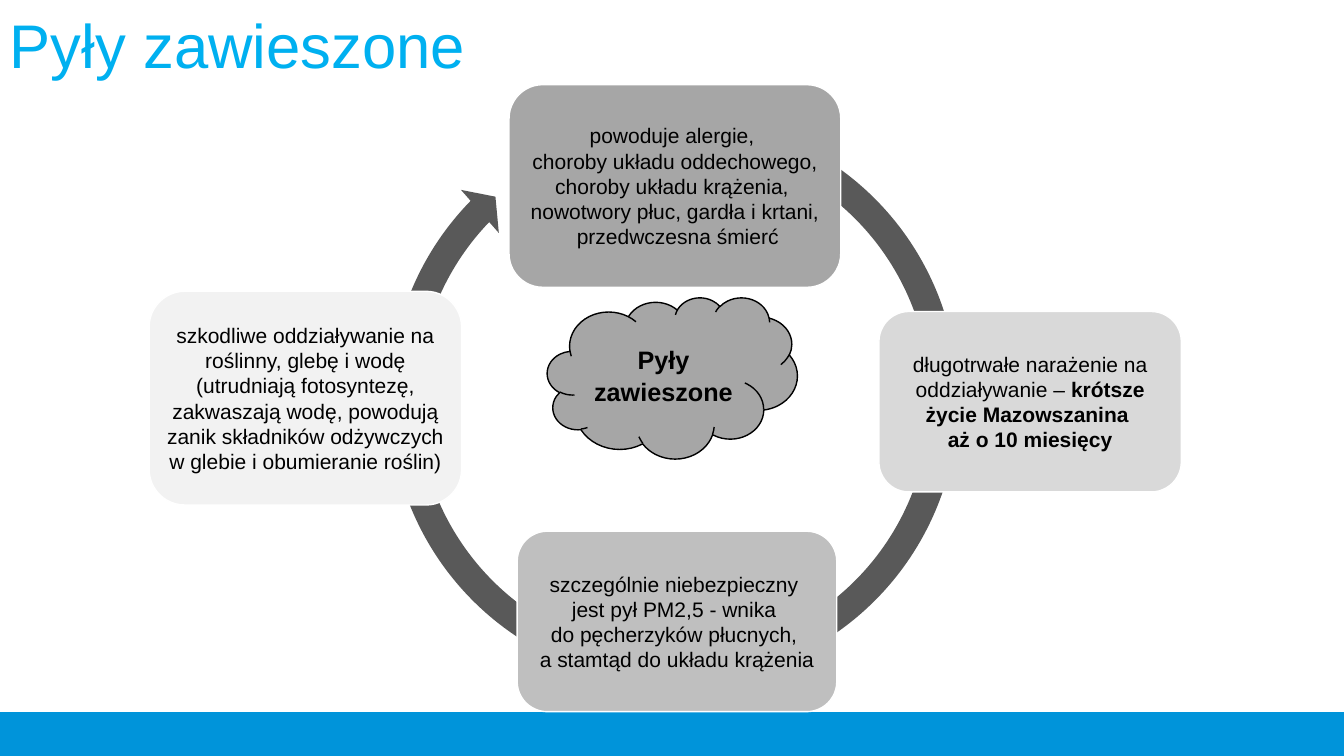
"""Build the slide on the effects of suspended dust as a cycle of four boxes."""
import pptx
import pptx.util
import pptx.dml.color
import pptx.enum.shapes
import pptx.enum.text

COLORS = {"bar": "0094DA", "ring": "595959", "title": "00B0F0", "text": "000000",
          "edge": "FFFFFF", "top": "A6A6A6", "right": "D9D9D9", "bottom": "BFBFBF",
          "left": "F2F2F2", "cloud": "A6A6A6"}
SHAPE = pptx.enum.shapes.MSO_SHAPE
CENTER = pptx.enum.text.PP_ALIGN.CENTER
MIDDLE = pptx.enum.text.MSO_ANCHOR.MIDDLE

prs = pptx.Presentation()
prs.slide_width = pptx.util.Inches(13.33)
prs.slide_height = pptx.util.Inches(7.5)
s = prs.slides.add_slide(prs.slide_layouts[6])
col = prs.slide_width / 100
row = prs.slide_height / 100


def add_block(kind, place, fill, line=None):
    x, y, w, h = place
    sp = s.shapes.add_shape(kind, round(x * col), round(y * row), round(w * col), round(h * row))
    sp.shadow.inherit = False
    sp.fill.solid()
    sp.fill.fore_color.rgb = pptx.dml.color.RGBColor.from_string(COLORS[fill])
    if line:
        sp.line.color.rgb = pptx.dml.color.RGBColor.from_string(COLORS[line])
        sp.line.width = pptx.util.Pt(1)
    else:
        sp.line.fill.background()
    return sp


def format_run(r, size, color="text", bold=False):
    r.font.name = "Arial"
    r.font.size = pptx.util.Pt(size)
    r.font.bold = bold
    r.font.color.rgb = pptx.dml.color.RGBColor.from_string(COLORS[color])


add_block(SHAPE.RECTANGLE, (0, 94.27, 100, 5.73), "bar", "bar")

ring = add_block(SHAPE.CIRCULAR_ARROW, (27.9, 13.33, 44.48, 79.07), "ring")
for i, value in enumerate((0.047, 2.729, 134.49, 176.248, 0.048)):
    ring.adjustments[i] = value

effects = [
    ("top", (37.88, 11.2, 24.68, 26.8),
     ["powoduje alergie, ", "choroby układu oddechowego,", "choroby układu krążenia, ",
      "nowotwory płuc, gardła i krtani,", " przedwczesna śmierć"]),
    ("right", (65.4, 41.2, 22.5, 23.87),
     ["długotrwałe narażenie na oddziaływanie – *krótsze życie Mazowszanina ",
      "*aż o 10 miesięcy"]),
    ("bottom", (38.48, 70.27, 23.78, 23.87),
     ["szczególnie niebezpieczny ", "jest pył PM2,5 - wnika ",
      "do pęcherzyków płucnych, ", "a stamtąd do układu krążenia"]),
    ("left", (11.1, 38.53, 23.25, 28.27),
     ["szkodliwe oddziaływanie na roślinny, glebę i wodę (utrudniają fotosyntezę, "
      "zakwaszają wodę, powodują zanik składników odżywczych w glebie i obumieranie roślin)"]),
]
for side, place, lines in effects:
    tf = add_block(SHAPE.ROUNDED_RECTANGLE, place, side, "edge").text_frame
    tf.word_wrap = True
    tf.vertical_anchor = MIDDLE
    tf.margin_left = tf.margin_right = tf.margin_top = tf.margin_bottom = pptx.util.Inches(0.06)
    for i, text in enumerate(lines):
        p = tf.add_paragraph() if i else tf.paragraphs[0]
        p.alignment = CENTER
        for part, words in enumerate(text.split("*")):
            if words:
                r = p.add_run()
                r.text = words
                format_run(r, 15, bold=part == 1)

tf = add_block(SHAPE.CLOUD, (40.73, 39.33, 18.6, 21.33), "cloud", "text").text_frame
tf.text = "Pyły zawieszone"
tf.word_wrap = True
tf.vertical_anchor = MIDDLE
p = tf.paragraphs[0]
p.alignment = CENTER
p.line_spacing = 1.07
p.space_after = pptx.util.Pt(8)
format_run(p.runs[0], 18, bold=True)

title = s.shapes.add_textbox(0, round(0.27 * row), prs.slide_width, round(11.2 * row))
tf = title.text_frame
tf.text = "Pyły zawieszone"
tf.word_wrap = True
tf.auto_size = pptx.enum.text.MSO_AUTO_SIZE.SHAPE_TO_FIT_TEXT
format_run(tf.paragraphs[0].runs[0], 44, "title")

prs.save("out.pptx")
